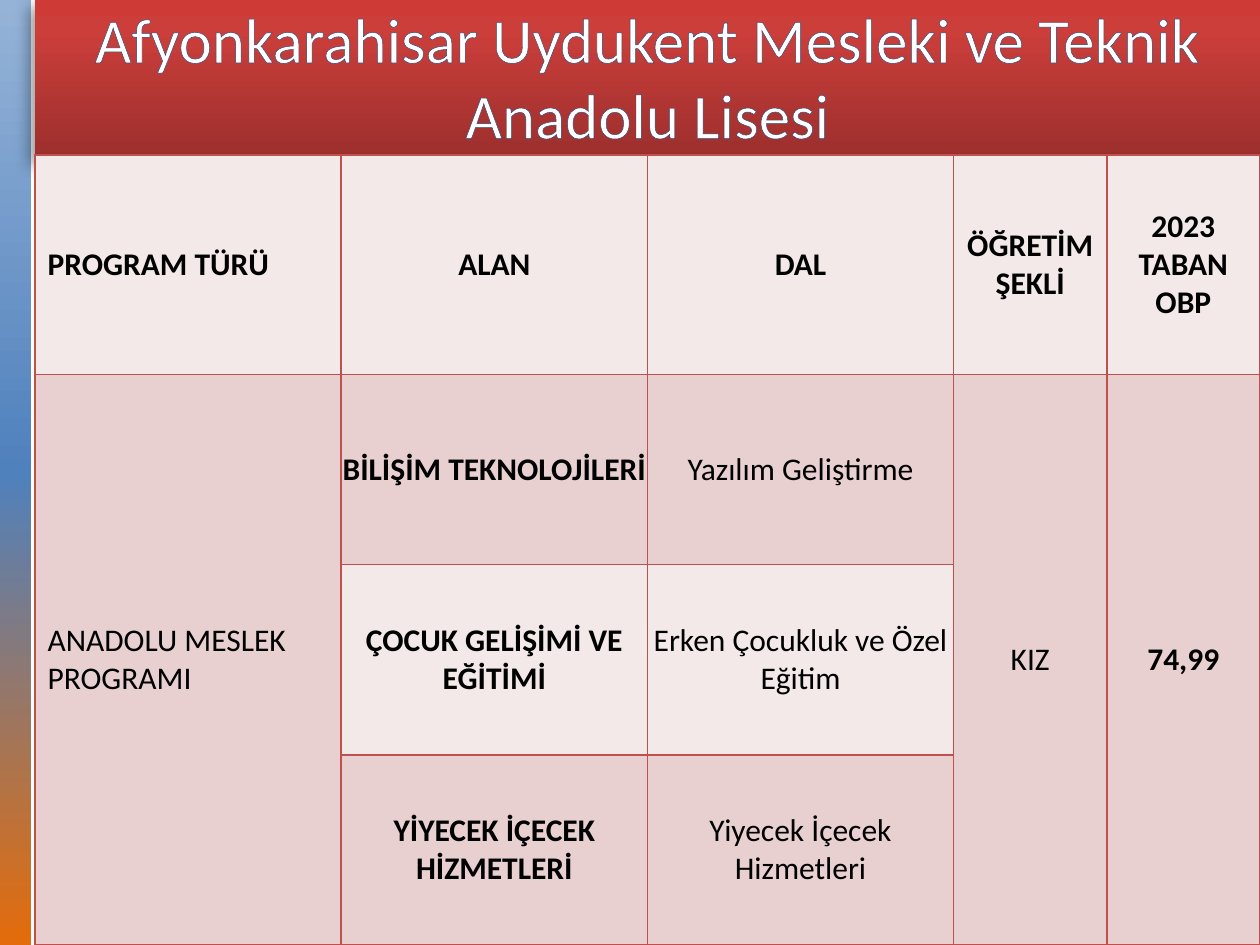
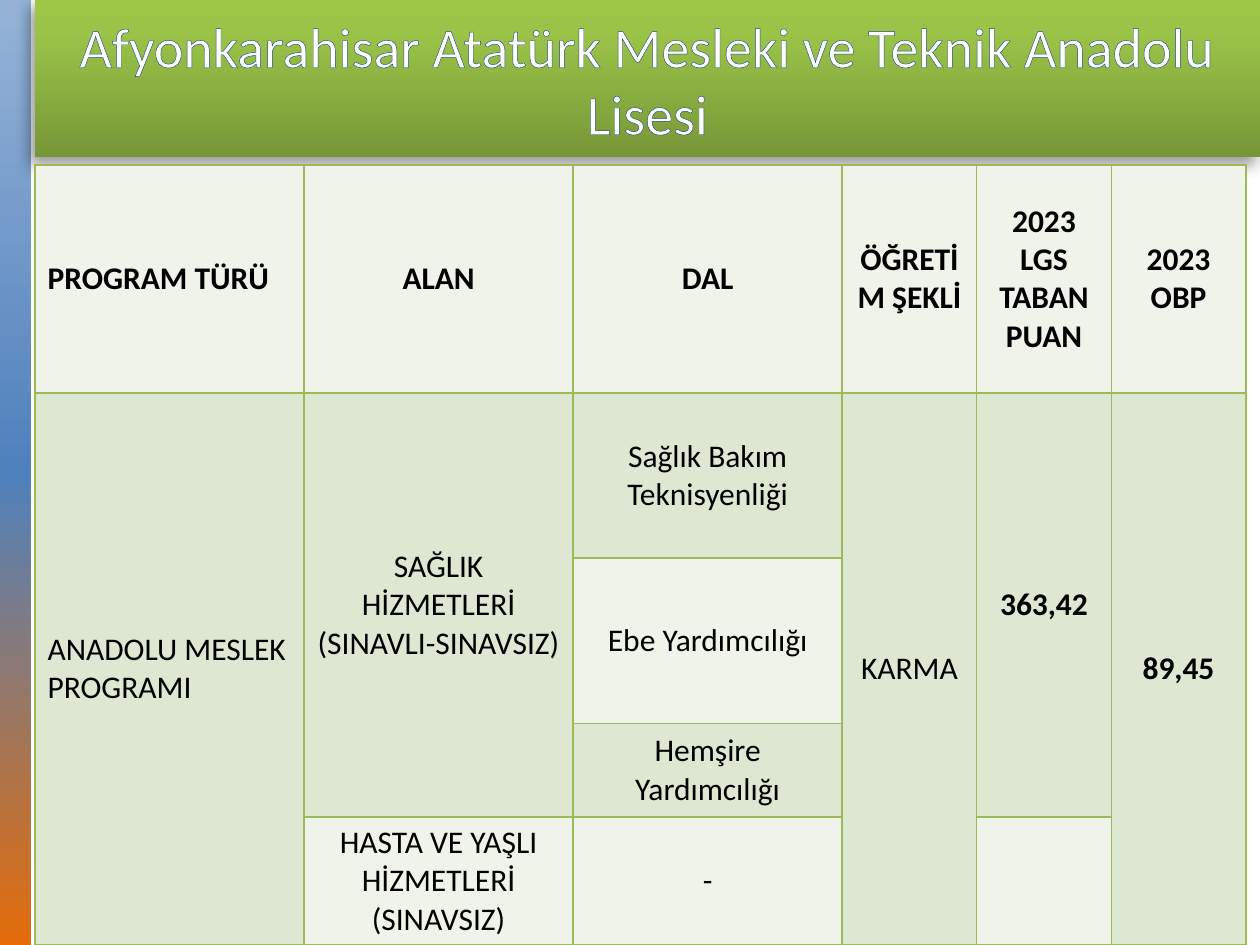
from dataclasses import dataclass, field

from lxml import etree
from pptx import Presentation
from pptx.dml import color as col
from pptx.enum import shapes, text
from pptx.oxml import ns
from pptx.util import Pt

RGB = col.RGBColor.from_string
MID = text.MSO_ANCHOR.MIDDLE
LOW = text.MSO_ANCHOR.BOTTOM
Stops = tuple[tuple[int, str], ...]


@dataclass(frozen=True)
class Hue:
    title: Stops
    line: str
    light: str
    dark: str


@dataclass(frozen=True)
class Theme:
    font: str = "Calibri"
    body: int = 18
    ink: str = "000000"
    white: str = "FFFFFF"
    edge: str = "1F497D"
    band: Stops = ((0, "95B3D7"), (50, "4F81BD"), (100, "E46C0A"))
    red: Hue = Hue(((0, "9C2F2D"), (80, "CB3E3A"), (100, "CE3B37")),
                   "C0504D", "F4E9E9", "E8D0D0")
    green: Hue = Hue(((0, "779737"), (80, "9BC348"), (100, "9DC746")),
                     "9BBB59", "EFF3EA", "DEE7D1")


THEME = Theme()


@dataclass(frozen=True)
class Entry:
    row: int
    col: int
    words: str
    bold: bool = False
    span: int = 1
    tight: bool = False


@dataclass(frozen=True)
class School:
    name: str
    size: int
    anchor: text.MSO_ANCHOR
    hue: Hue
    top: float
    width: float
    units: tuple[int, ...]
    rows: tuple[float, ...]
    heads: tuple[str, ...]
    cells: tuple[Entry, ...] = field(default=())


SCHOOLS = (
    School(
        "Afyonkarahisar Uydukent Mesleki ve Teknik Anadolu Lisesi",
        36, LOW, THEME.red, 88.5, 700, (2, 2, 2, 1, 1),
        (125.5, 108.7, 108.7, 108.7),
        ("PROGRAM TÜRÜ", "ALAN", "DAL", "ÖĞRETİM ŞEKLİ", "2023 TABAN OBP"),
        (
            Entry(1, 0, "ANADOLU MESLEK PROGRAMI", span=3),
            Entry(1, 1, "BİLİŞİM TEKNOLOJİLERİ", bold=True, tight=True),
            Entry(1, 2, "Yazılım Geliştirme", tight=True),
            Entry(1, 3, "KIZ", span=3),
            Entry(1, 4, "74,99", bold=True, span=3),
            Entry(2, 1, "ÇOCUK GELİŞİMİ VE EĞİTİMİ", bold=True, tight=True),
            Entry(2, 2, "Erken Çocukluk ve Özel Eğitim", tight=True),
            Entry(3, 1, "YİYECEK İÇECEK HİZMETLERİ", bold=True, tight=True),
            Entry(3, 2, "Yiyecek İçecek Hizmetleri", tight=True),
        ),
    ),
    School(
        "Afyonkarahisar Atatürk Mesleki ve Teknik Anadolu Lisesi",
        32, MID, THEME.green, 94.3, 692, (2, 2, 2, 1, 1, 1),
        (130.2, 94.5, 94.5, 53.4, 72.6),
        ("PROGRAM TÜRÜ", "ALAN", "DAL", "ÖĞRETİM ŞEKLİ",
         "2023 LGS\nTABAN PUAN", "2023 OBP"),
        (
            Entry(1, 0, "ANADOLU MESLEK PROGRAMI", span=4),
            Entry(1, 1, "SAĞLIK HİZMETLERİ\n(SINAVLI-SINAVSIZ)", span=3),
            Entry(1, 2, "Sağlık Bakım Teknisyenliği"),
            Entry(1, 3, "KARMA", span=4),
            Entry(1, 4, "363,42", bold=True, span=3),
            Entry(1, 5, "89,45", bold=True, span=4),
            Entry(2, 2, "Ebe Yardımcılığı"),
            Entry(3, 2, "Hemşire Yardımcılığı"),
            Entry(4, 1, "HASTA VE YAŞLI HİZMETLERİ\n(SINAVSIZ)"),
            Entry(4, 2, "-"),
        ),
    ),
)


def node(root, tag: str, **attrs):
    return etree.SubElement(root, ns.qn(f"a:{tag}"),
                            {k: str(v) for k, v in attrs.items()})


def line(root, tag: str, tone: str):
    ln = node(root, tag, w=Pt(1))
    node(node(ln, "solidFill"), "srgbClr", val=tone)
    return ln


def shade(shape, stops: Stops, angle: int) -> None:
    shape.fill.gradient()
    shape.fill.gradient_angle = angle
    group = shape.element.spPr.find(".//" + ns.qn("a:gsLst"))
    for old in list(group):
        group.remove(old)
    for place, tone in stops:
        node(node(group, "gs", pos=place * 1000), "srgbClr", val=tone)


def style(para, size: int, tone: str, bold: bool = False) -> None:
    font = para.font
    font.name, font.size, font.bold = THEME.font, Pt(size), bold
    font.color.rgb = RGB(tone)


def add_band(slide) -> None:
    band = slide.shapes.add_shape(shapes.MSO_SHAPE.RECTANGLE,
                                  0, 0, Pt(18), Pt(540))
    band.shadow.inherit = False
    band.line.fill.background()
    shade(band, THEME.band, 270)


def set_title(slide, school: School) -> None:
    title = slide.shapes.title
    slide.shapes.element.append(title.element)
    title.left, title.top = Pt(20), Pt(0)
    title.width, title.height = Pt(700), Pt(90)
    shade(title, school.hue.title, 90)
    cast = node(node(title.element.spPr, "effectLst"), "outerShdw",
                blurRad=Pt(8), dist=Pt(5), dir=135 * 60000,
                algn="tl", rotWithShape=0)
    node(node(cast, "srgbClr", val="000000"), "alpha", val=40000)
    frame = title.text_frame
    frame.text = school.name
    frame.word_wrap = True
    frame.auto_size = text.MSO_AUTO_SIZE.NONE
    frame.vertical_anchor = school.anchor
    para = frame.paragraphs[0]
    para.alignment = text.PP_ALIGN.CENTER
    style(para, school.size, THEME.white)
    for run in para.runs:
        props = run.font._element
        props.insert(0, line(props, "ln", THEME.edge))


def fill_cell(cell, entry: Entry) -> None:
    cell.text = entry.words
    if entry.tight:
        cell.margin_left = cell.margin_right = 0
        cell.margin_top = cell.margin_bottom = 0
    for para in cell.text_frame.paragraphs:
        if entry.col:
            para.alignment = text.PP_ALIGN.CENTER
        style(para, THEME.body, THEME.ink, entry.bold)


def add_grid(slide, school: School) -> None:
    frame = slide.shapes.add_table(
        len(school.rows), len(school.units), Pt(20), Pt(school.top),
        Pt(school.width), Pt(sum(school.rows)))
    table = frame.table
    table.first_row = table.horz_banding = False
    for part, units in zip(table.columns, school.units):
        part.width = Pt(school.width * units / sum(school.units))
    for part, height in zip(table.rows, school.rows):
        part.height = Pt(height)
    for row, part in enumerate(table.rows):
        for cell in part.cells:
            cell.vertical_anchor = MID
            props = cell._tc.get_or_add_tcPr()
            for side in ("lnL", "lnR", "lnT", "lnB"):
                line(props, side, school.hue.line)
            cell.fill.solid()
            tone = school.hue.dark if row % 2 else school.hue.light
            cell.fill.fore_color.rgb = RGB(tone)
    heads = (Entry(0, i, words, bold=True)
             for i, words in enumerate(school.heads))
    for entry in (*heads, *school.cells):
        cell = table.cell(entry.row, entry.col)
        if entry.span > 1:
            cell.merge(table.cell(entry.row + entry.span - 1, entry.col))
        fill_cell(cell, entry)


def main() -> None:
    deck = Presentation()
    deck.slide_width, deck.slide_height = Pt(720), Pt(540)
    for school in SCHOOLS:
        slide = deck.slides.add_slide(deck.slide_layouts[5])
        add_band(slide)
        set_title(slide, school)
        add_grid(slide, school)
    deck.save("out.pptx")


if __name__ == "__main__":
    main()
